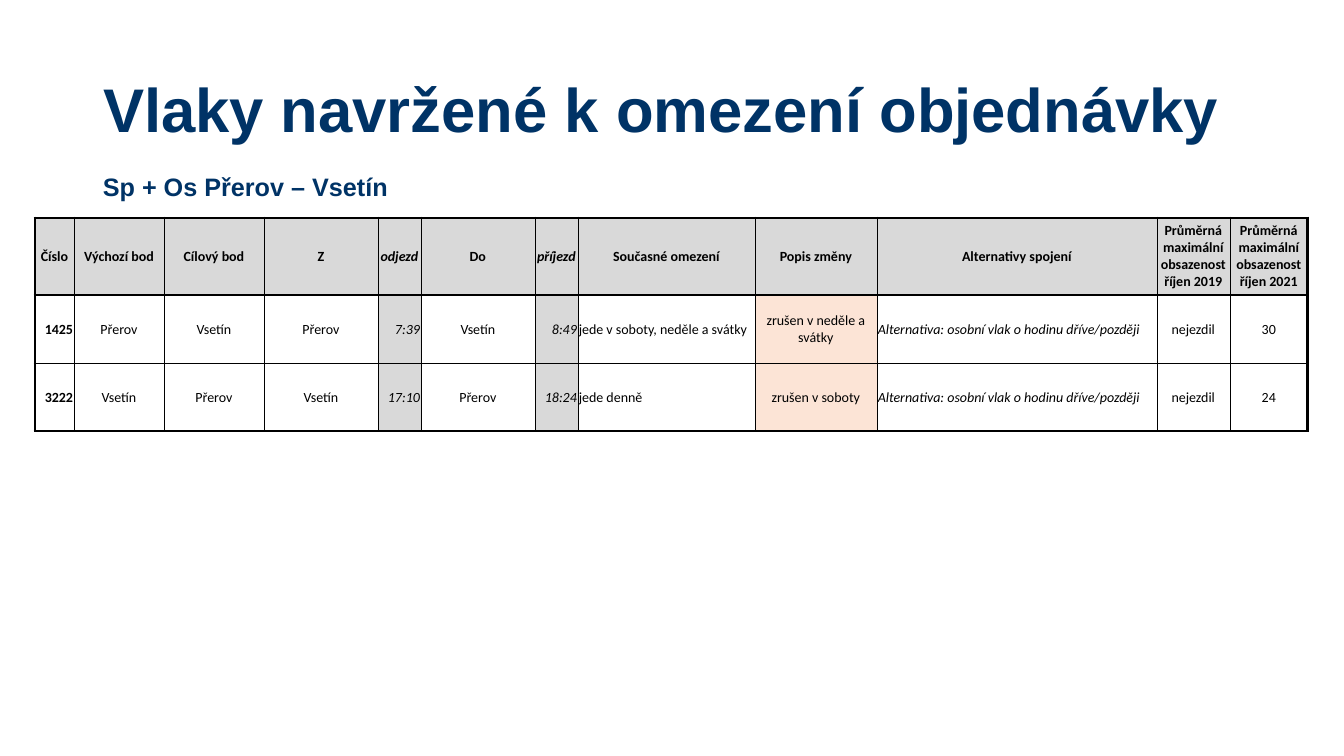
from dataclasses import dataclass
from typing import NamedTuple

from lxml.etree import SubElement
from pptx import Presentation
from pptx.dml.color import RGBColor
from pptx.enum.text import MSO_ANCHOR, PP_ALIGN
from pptx.oxml.ns import qn
from pptx.util import Emu, Pt


@dataclass(frozen=True)
class Theme:
    navy: str = "003366"
    black: str = "000000"
    grey: str = "D9D9D9"
    peach: str = "FCE4D6"
    heading_font: str = "Arial"
    table_font: str = "Calibri"
    title_size: int = 44
    subtitle_size: int = 18
    table_size: int = 10
    thick_line: float = 2.25
    thin_line: float = 0.25


class Column(NamedTuple):
    heading: str
    width: int
    align: PP_ALIGN = PP_ALIGN.CENTER
    bold: bool = False
    italic: bool = False
    italic_heading: bool = False
    fill: str = ""


THEME = Theme()
EMU_PER_PX = 914400 / 100.8
TIME = {"align": PP_ALIGN.RIGHT, "italic": True, "italic_heading": True, "fill": THEME.grey}
COLUMNS = [
    Column("Číslo", 39, PP_ALIGN.RIGHT, bold=True),
    Column("Výchozí bod", 90),
    Column("Cílový bod", 100),
    Column("Z", 114),
    Column("odjezd", 43, **TIME),
    Column("Do", 114),
    Column("příjezd", 43, **TIME),
    Column("Současné omezení", 177, PP_ALIGN.LEFT),
    Column("Popis změny", 122, fill=THEME.peach),
    Column("Alternativy spojení", 280, PP_ALIGN.LEFT, italic=True),
    Column("Průměrná maximální obsazenost říjen 2019", 73),
    Column("Průměrná maximální obsazenost říjen 2021", 78),
]
ALTERNATIVE = "Alternativa: osobní vlak o hodinu dříve/později"
TRAINS = [
    ["1425", "Přerov", "Vsetín", "Přerov", "7:39", "Vsetín", "8:49",
     "jede v soboty, neděle a svátky", "zrušen v neděle a svátky",
     ALTERNATIVE, "nejezdil", "30"],
    ["3222", "Vsetín", "Přerov", "Vsetín", "17:10", "Přerov", "18:24",
     "jede denně", "zrušen v soboty", ALTERNATIVE, "nejezdil", "24"],
]
ROW_HEIGHTS = [77, 68, 68]


def px(length):
    return Emu(round(length * EMU_PER_PX))


def set_values(target, values):
    for name, value in values.items():
        setattr(target, name, value)


def place(shape, left, top, width, height):
    set_values(shape, {"left": px(left), "top": px(top),
                       "width": px(width), "height": px(height)})


def write(frame, text, color, font, align=PP_ALIGN.LEFT, spacing=1.0):
    frame.word_wrap = True
    para = frame.paragraphs[0]
    set_values(para, {"alignment": align, "line_spacing": spacing})
    span = para.add_run()
    span.text = text
    set_values(span.font, font)
    span.font.color.rgb = RGBColor.from_string(color)


def heading_format(size):
    return {"name": THEME.heading_font, "size": Pt(size), "bold": True}


def add_title(page, text):
    title = page.shapes.title
    place(title, 93, 40, 1159, 146)
    title.text_frame.vertical_anchor = MSO_ANCHOR.MIDDLE
    write(title.text_frame, text, THEME.navy, heading_format(THEME.title_size), spacing=0.9)


def add_subtitle(page, text):
    box = page.shapes.add_textbox(px(93), px(166), px(672), px(40))
    write(box.text_frame, text, THEME.navy, heading_format(THEME.subtitle_size))


def add_borders(cell, thick_sides):
    properties = cell._tc.get_or_add_tcPr()
    for side in "LRTB":
        weight = THEME.thick_line if side in thick_sides else THEME.thin_line
        line = SubElement(properties, qn(f"a:ln{side}"), w=str(Pt(weight)))
        fill = SubElement(line, qn("a:solidFill"))
        SubElement(fill, qn("a:srgbClr"), val=THEME.black)


def outer_sides(row, index):
    sides = {"L": index == 0, "R": index == len(COLUMNS) - 1,
             "T": row <= 1, "B": row in (0, len(TRAINS))}
    return [side for side, thick in sides.items() if thick]


def format_cell(cell, row, index, text):
    column = COLUMNS[index]
    heading = row == 0
    margin = px(0 if heading else 1)
    set_values(cell, {"margin_left": margin, "margin_right": margin,
                      "margin_top": margin, "margin_bottom": 0,
                      "vertical_anchor": MSO_ANCHOR.MIDDLE})
    add_borders(cell, outer_sides(row, index))
    fill = THEME.grey if heading else column.fill
    if fill:
        cell.fill.solid()
        cell.fill.fore_color.rgb = RGBColor.from_string(fill)
    else:
        cell.fill.background()
    font = {"name": THEME.table_font, "size": Pt(THEME.table_size),
            "bold": heading or column.bold,
            "italic": column.italic_heading if heading else column.italic}
    write(cell.text_frame, text, THEME.black, font,
          PP_ALIGN.CENTER if heading else column.align)


def add_train_table(page):
    rows = [[column.heading for column in COLUMNS], *TRAINS]
    width = sum(column.width for column in COLUMNS)
    frame = page.shapes.add_table(len(rows), len(COLUMNS), px(35), px(218),
                                  px(width), px(sum(ROW_HEIGHTS)))
    table = frame.table
    set_values(table, {"first_row": False, "horz_banding": False})
    for table_column, column in zip(table.columns, COLUMNS):
        table_column.width = px(column.width)
    for table_row, height in zip(table.rows, ROW_HEIGHTS):
        table_row.height = px(height)
    for row, texts in enumerate(rows):
        for index, text in enumerate(texts):
            format_cell(table.cell(row, index), row, index, text)


def main():
    deck = Presentation()
    set_values(deck, {"slide_width": px(1344), "slide_height": px(756)})
    page = deck.slides.add_slide(deck.slide_layouts[5])
    add_title(page, "Vlaky navržené k omezení objednávky")
    add_subtitle(page, "Sp + Os Přerov – Vsetín")
    add_train_table(page)
    deck.save("out.pptx")


if __name__ == "__main__":
    main()
